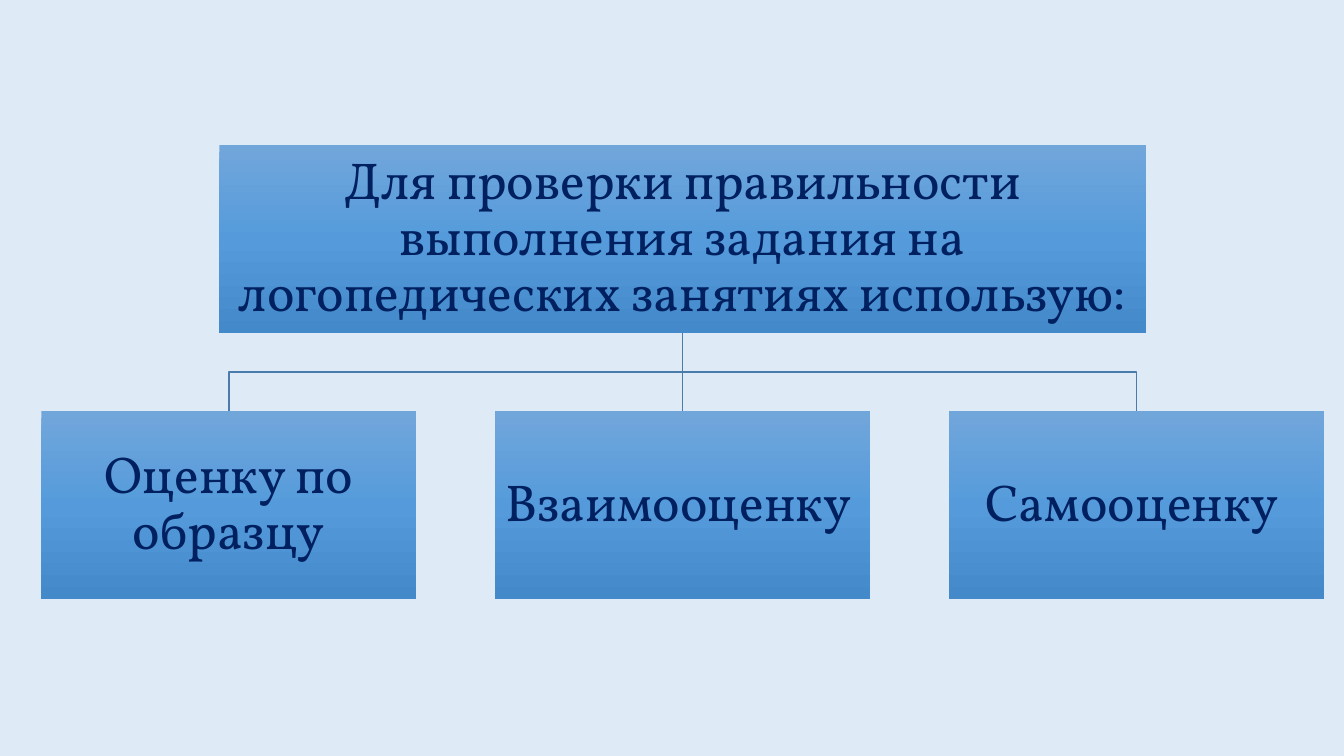
from copy import deepcopy

from pptx import Presentation
from pptx.dml.color import RGBColor
from pptx.enum.shapes import MSO_CONNECTOR, MSO_SHAPE
from pptx.enum.text import MSO_ANCHOR, PP_ALIGN
from pptx.oxml.ns import qn
from pptx.oxml.xmlchemy import OxmlElement
from pptx.util import Inches, Pt

HEADING = "Для проверки правильности выполнения задания на логопедических занятиях использую:"
METHODS = ["Оценку по образцу", "Взаимооценку ", "Самооценку "]

BACKGROUND = RGBColor(0xDE, 0xEB, 0xF7)
LINE = RGBColor(0x49, 0x7C, 0xAB)
GRADIENT = [
    (0, RGBColor(0x71, 0xA6, 0xDB)),
    (0.5, RGBColor(0x55, 0x9B, 0xDB)),
    (1, RGBColor(0x44, 0x8A, 0xCA)),
]
FONT = {"name": "Vollkorn", "size": Pt(37)}
TEXT = RGBColor(0x00, 0x20, 0x60)
RECTANGLE = MSO_SHAPE.RECTANGLE
STRAIGHT = MSO_CONNECTOR.STRAIGHT
MIDDLE = MSO_ANCHOR.MIDDLE
CENTER = PP_ALIGN.CENTER

CENTER_X = 6.77
HEADING_TOP, HEADING_WIDTH = 1.44, 9.19
METHOD_TOP, METHOD_WIDTH = 4.08, 3.72
BOX_HEIGHT = 1.86
PITCH = 4.5
INSET = Inches(0.03)
FRAME = {"word_wrap": True, "vertical_anchor": MIDDLE, "margin_left": INSET,
         "margin_right": INSET, "margin_top": INSET, "margin_bottom": INSET}


def set_attributes(target, values):
    for name, value in values.items():
        setattr(target, name, value)


def fill_gradient(shape):
    shape.fill.gradient()
    shape.fill.gradient_angle = 270
    stop_list = shape._element.spPr.find(qn("a:gradFill")).find(qn("a:gsLst"))
    stop_list.append(deepcopy(stop_list[-1]))
    for stop, (position, color) in zip(shape.fill.gradient_stops, GRADIENT):
        stop.position = position
        stop.color.rgb = color


def add_box(s, text, center_x, top, width):
    box = s.shapes.add_shape(RECTANGLE, Inches(center_x - width / 2), Inches(top),
                             Inches(width), Inches(BOX_HEIGHT))
    box.shadow.inherit = False
    box.line.fill.background()
    fill_gradient(box)
    tf = box.text_frame
    set_attributes(tf, FRAME)
    p = tf.paragraphs[0]
    set_attributes(p, {"alignment": CENTER, "line_spacing": 0.9})
    r = p.add_run()
    r.text = text
    set_attributes(r.font, FONT)
    r.font.color.rgb = TEXT
    return box


def add_branch(s, center_x):
    """Draw the bent line from the heading down to a side box."""
    start_y = HEADING_TOP + BOX_HEIGHT
    bend_y = (start_y + METHOD_TOP) / 2
    points = [(CENTER_X, bend_y), (center_x, bend_y), (center_x, METHOD_TOP)]
    builder = s.shapes.build_freeform(Inches(CENTER_X), Inches(start_y))
    builder.add_line_segments([(Inches(x), Inches(y)) for x, y in points], close=False)
    branch = builder.convert_to_shape()
    branch.shadow.inherit = False
    branch.fill.background()
    return branch


def add_stem(s, upper, lower):
    stem = s.shapes.add_connector(STRAIGHT, 0, 0, 0, 0)
    stem.begin_connect(upper, 2)
    stem.end_connect(lower, 0)
    stem._element.spPr.append(OxmlElement("a:effectLst"))
    return stem


def main():
    prs = Presentation()
    prs.slide_width, prs.slide_height = Inches(13.33), Inches(7.5)
    s = prs.slides.add_slide(prs.slide_layouts[6])
    s.background.fill.solid()
    s.background.fill.fore_color.rgb = BACKGROUND

    centers = [CENTER_X + (i - 1) * PITCH for i in range(len(METHODS))]
    lines = [add_branch(s, x) for x in (centers[0], centers[-1])]
    heading = add_box(s, HEADING, CENTER_X, HEADING_TOP, HEADING_WIDTH)
    boxes = [add_box(s, text, x, METHOD_TOP, METHOD_WIDTH)
             for text, x in zip(METHODS, centers)]
    lines.append(add_stem(s, heading, boxes[1]))
    for line in lines:
        line.line.color.rgb = LINE
        line.line.width = Pt(1)

    prs.save("out.pptx")


if __name__ == "__main__":
    main()
